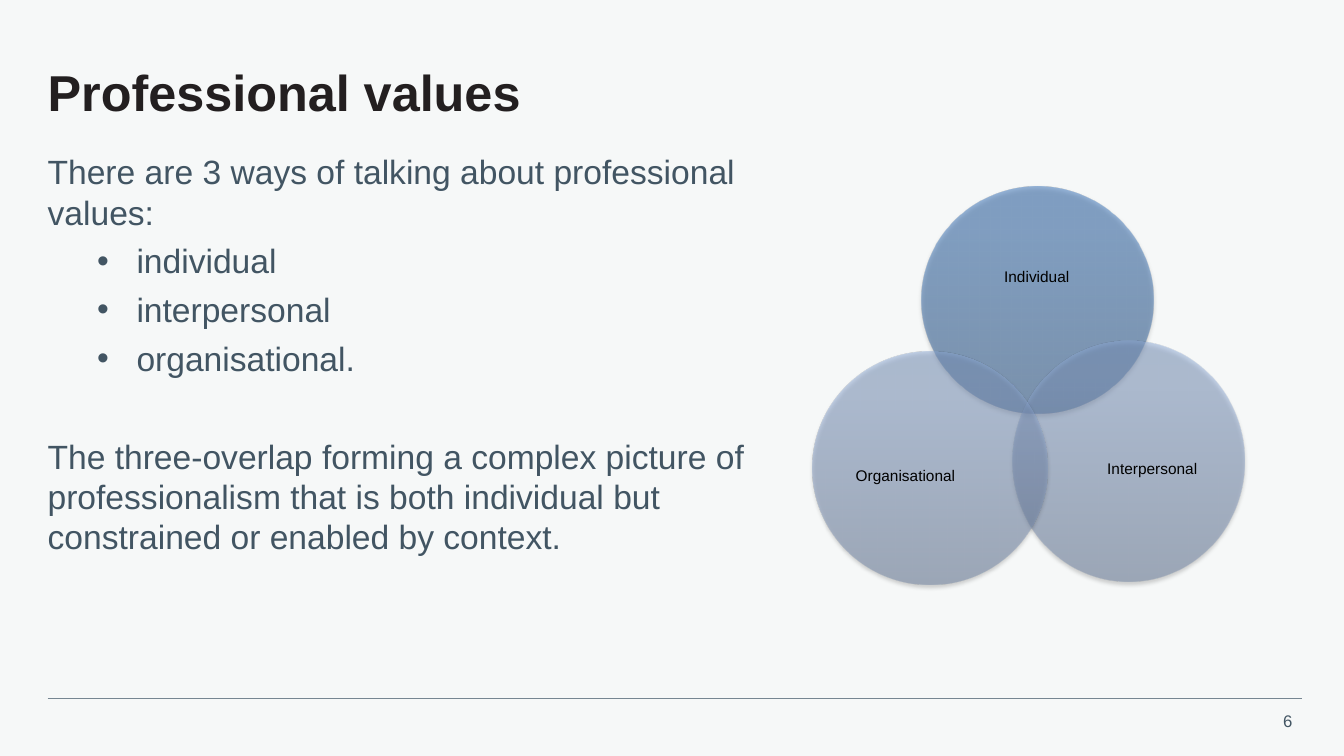
from lxml.etree import SubElement
from pptx import Presentation
from pptx.dml.color import RGBColor
from pptx.enum.shapes import MSO_CONNECTOR, MSO_SHAPE
from pptx.enum.text import MSO_ANCHOR as ANCHOR, MSO_AUTO_SIZE as AUTO_SIZE, PP_ALIGN as ALIGN
from pptx.oxml import parse_xml
from pptx.oxml.ns import nsdecls, qn
from pptx.util import Cm, Pt

COLORS = {"paper": "F6F8F8", "title": "231F20", "body": "425563",
          "rule": "768692", "label": "000000", "shadow": "000000"}
GRADIENTS = {"strong": ("2A568B", "3770B5", "3570B8"),
             "soft": ("6D81A1", "8DA7D1", "8CA8D3")}
GRADIENT_STOPS = (0, 80000, 100000)


def format_frame(shape, anchor):
    frame = shape.text_frame
    settings = {"margin_left": 0, "margin_right": 0, "margin_top": 0, "margin_bottom": 0,
                "word_wrap": True, "auto_size": AUTO_SIZE.NONE, "vertical_anchor": anchor}
    for name, value in settings.items():
        setattr(frame, name, value)
    return frame


def format_paragraph(paragraph, text, size, color, bold=False, **settings):
    for name, value in settings.items():
        setattr(paragraph, name, value)
    run = paragraph.add_run()
    run.text = text
    for name, value in {"name": "Arial", "size": Pt(size), "bold": bold}.items():
        setattr(run.font, name, value)
    run.font.color.rgb = RGBColor.from_string(COLORS[color])


deck = Presentation()
deck.slide_width, deck.slide_height = Cm(33.87), Cm(19.05)
slide = deck.slides.add_slide(deck.slide_layouts[1])
slide.background.fill.solid()
slide.background.fill.fore_color.rgb = RGBColor.from_string(COLORS["paper"])

# Footer rule and page number
rule = slide.shapes.add_connector(MSO_CONNECTOR.STRAIGHT, Cm(1.2), Cm(17.6), Cm(32.8), Cm(17.6))
rule.line.color.rgb = RGBColor.from_string(COLORS["rule"])
rule.line.width = Pt(0.5)
SubElement(rule._element.spPr, qn("a:effectLst"))
page_number = slide.shapes.add_textbox(Cm(31.55), Cm(17.78), Cm(1.02), Cm(0.76))
format_paragraph(format_frame(page_number, ANCHOR.MIDDLE).paragraphs[0],
                 "6", 12, "body", alignment=ALIGN.RIGHT)

# Title
title = slide.shapes.title
title.left, title.top, title.width, title.height = Cm(1.2), Cm(1.2), Cm(31.67), Cm(2.41)
format_paragraph(format_frame(title, ANCHOR.MIDDLE).paragraphs[0], "Professional values",
                 36, "title", bold=True, alignment=ALIGN.LEFT, line_spacing=0.9)

# Body: text, bulleted, points before
statements = [
    ("There are 3 ways of talking about professional values:", False, 0),
    ("individual", True, 0),
    ("interpersonal", True, 0),
    ("organisational.", True, 0),
    ("The three-overlap forming a complex picture of professionalism that is both "
     "individual but constrained or enabled by context.", False, 35),
]
body = slide.placeholders[1]
body.left, body.top, body.width, body.height = Cm(1.2), Cm(3.81), Cm(18.67), Cm(13.18)
body_frame = format_frame(body, ANCHOR.TOP)
for index, (statement, bulleted, gap) in enumerate(statements):
    paragraph = body_frame.add_paragraph() if index else body_frame.paragraphs[0]
    properties = paragraph._p.get_or_add_pPr()
    properties.set("marL", str(Cm(2.24) if bulleted else 0))
    properties.set("indent", str(Cm(-0.99) if bulleted else 0))
    if bulleted:
        bullet_color = SubElement(properties, qn("a:buClr"))
        SubElement(bullet_color, qn("a:srgbClr"), val=COLORS["body"])
        SubElement(properties, qn("a:buFont"), typeface="Arial")
        SubElement(properties, qn("a:buChar"), char="•")
    else:
        SubElement(properties, qn("a:buNone"))
    format_paragraph(paragraph, statement, 24, "body", alignment=ALIGN.LEFT,
                     line_spacing=1.0, space_before=Pt(gap), space_after=Pt(6))

# Venn diagram: label, gradient, circle box, label box
circles = [
    ("Individual", "strong", (23.22, 4.7, 5.84, 5.72), (24.62, 6.08, 3.02, 1.83)),
    ("Interpersonal", "soft", (25.53, 8.59, 5.82, 6.07), (27.81, 10.64, 2.46, 2.36)),
    ("Organisational", "soft", (20.48, 8.86, 5.92, 5.87), (21.42, 10.85, 2.8, 2.29)),
]
venn = slide.shapes.add_group_shape().shapes
for label, gradient, circle_box, label_box in circles:
    circle = venn.add_shape(MSO_SHAPE.OVAL, *map(Cm, circle_box))
    circle.line.fill.background()
    circle.shadow.inherit = False
    stops = "".join(
        f'<a:gs pos="{position}"><a:srgbClr val="{color}"><a:alpha val="50000"/></a:srgbClr></a:gs>'
        for position, color in zip(GRADIENT_STOPS, GRADIENTS[gradient]))
    shape_properties = circle._element.spPr
    shape_properties.find(qn("a:prstGeom")).addnext(parse_xml(
        f'<a:gradFill {nsdecls("a")} rotWithShape="1"><a:gsLst>{stops}</a:gsLst>'
        '<a:lin ang="16200000" scaled="0"/></a:gradFill>'))
    shape_properties.find(qn("a:effectLst")).append(parse_xml(
        f'<a:outerShdw {nsdecls("a")} blurRad="{Pt(3.1)}" dist="{Pt(1.8)}" dir="5400000" '
        f'rotWithShape="0"><a:srgbClr val="{COLORS["shadow"]}"><a:alpha val="35000"/>'
        '</a:srgbClr></a:outerShdw>'))
    caption = venn.add_textbox(*map(Cm, label_box))
    format_paragraph(format_frame(caption, ANCHOR.MIDDLE).paragraphs[0], label, 11, "label",
                     alignment=ALIGN.CENTER, line_spacing=0.9)

deck.save("out.pptx")
